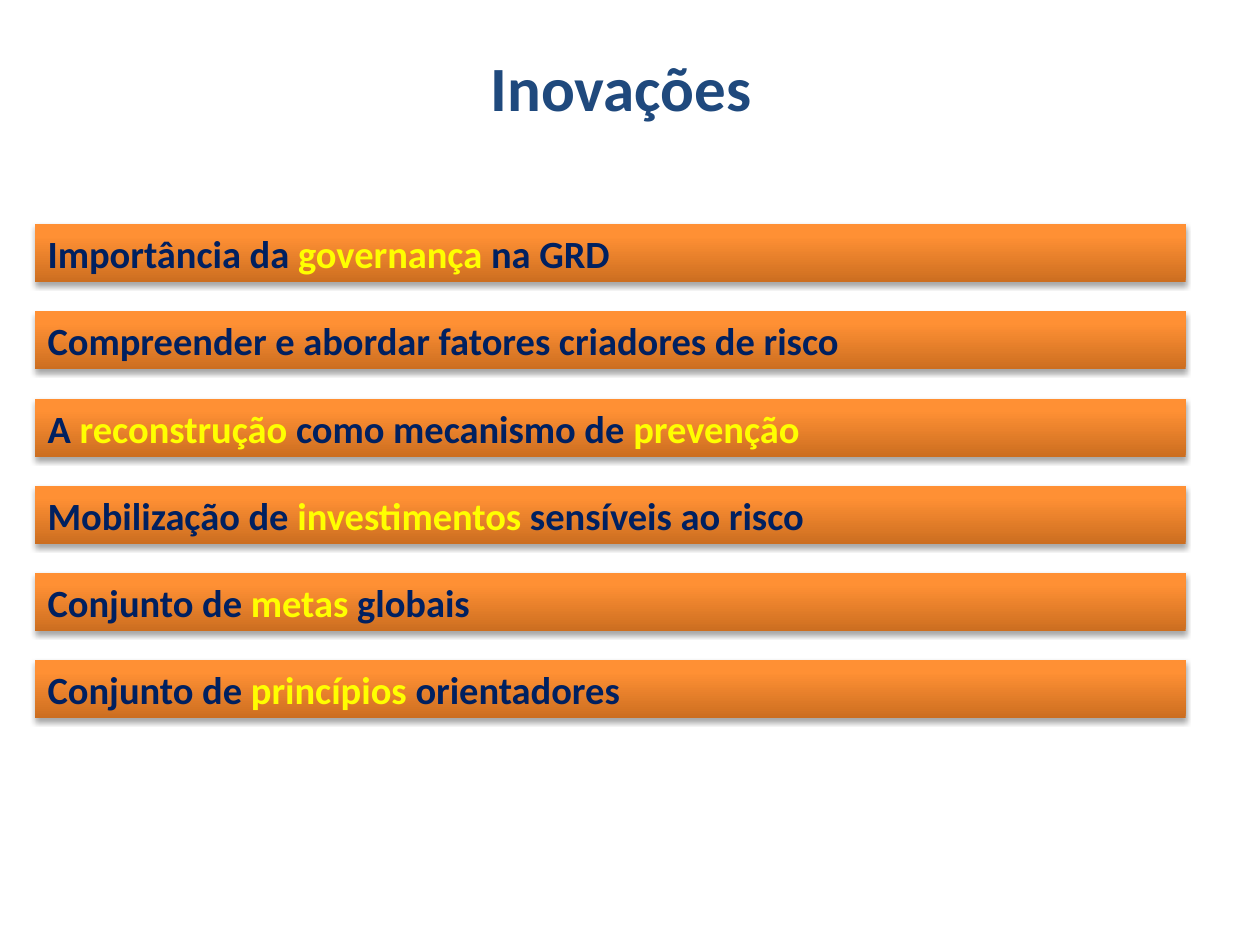
from lxml import etree
from pptx import Presentation, util as u
from pptx.dml.color import RGBColor
from pptx.enum import shapes, text
from pptx.oxml import ns
from copy import deepcopy

TITLE_BLUE = RGBColor(0x1F, 0x49, 0x7D)
NAVY = RGBColor(0x00, 0x20, 0x60)
YELLOW = RGBColor(0xFF, 0xFF, 0x00)
GRADIENT = [
    (0, RGBColor(0xCC, 0x6E, 0x20)),
    (0.8, RGBColor(0xFF, 0x90, 0x34)),
    (1, RGBColor(0xFF, 0x91, 0x36)),
]
FONT = "Calibri"

BAR_LEFT, BAR_TOP = 0.28, 1.78
BAR_WIDTH, BAR_HEIGHT = 9.13, 0.46
BAR_PITCH = 0.692

# Each bar is a list of pieces; those marked True are highlighted.
BARS = [
    [("Importância da ", False), ("governança", True), (" na GRD", False)],
    [("Compreender e abordar fatores criadores de risco", False)],
    [("A ", False), ("reconstrução", True),
     (" como mecanismo de ", False), ("prevenção", True)],
    [("Mobilização de ", False), ("investimentos", True),
     (" sensíveis ao risco", False)],
    [("Conjunto de ", False), ("metas", True), (" globais", False)],
    [("Conjunto de ", False), ("princípios ", True), ("orientadores", False)],
]


def format_font(font, size, color):
    font.name, font.size, font.bold = FONT, u.Pt(size), True
    font.color.rgb = color


def add_title(s, title):
    sp = s.shapes.title
    sp.left, sp.top = u.Inches(0.43), u.Inches(0.41)
    sp.width, sp.height = u.Inches(9), u.Inches(0.55)
    tf = sp.text_frame
    tf.text = title
    tf.vertical_anchor = text.MSO_ANCHOR.MIDDLE
    p = tf.paragraphs[0]
    p.alignment = text.PP_ALIGN.CENTER
    format_font(p.runs[0].font, 36, TITLE_BLUE)


def fill_gradient(sp):
    """Shade the shape from the dark stop at the bottom upwards."""
    sp.fill.gradient()
    sp.fill.gradient_angle = 90
    last = sp.fill.gradient_stops[-1]._gs
    last.addnext(deepcopy(last))
    for stop, (position, color) in zip(sp.fill.gradient_stops, GRADIENT):
        stop.position = position
        stop.color.rgb = color


def add_shadow(sp):
    sp.shadow.inherit = False
    effects = sp._element.spPr.find(ns.qn("a:effectLst"))
    shadow = etree.SubElement(
        effects, ns.qn("a:outerShdw"), blurRad=str(u.Pt(3.1)),
        dist=str(u.Pt(1.8)), dir="5400000", rotWithShape="0")
    color = etree.SubElement(shadow, ns.qn("a:srgbClr"), val="000000")
    etree.SubElement(color, ns.qn("a:alpha"), val="35000")


def add_bar(s, row, pieces):
    sp = s.shapes.add_shape(
        shapes.MSO_SHAPE.RECTANGLE,
        u.Inches(BAR_LEFT), u.Inches(BAR_TOP + row * BAR_PITCH),
        u.Inches(BAR_WIDTH), u.Inches(BAR_HEIGHT))
    fill_gradient(sp)
    sp.line.fill.background()
    add_shadow(sp)
    tf = sp.text_frame
    tf.word_wrap = True
    tf.vertical_anchor = text.MSO_ANCHOR.MIDDLE
    p = tf.paragraphs[0]
    p.alignment = text.PP_ALIGN.LEFT
    for words, highlighted in pieces:
        r = p.add_run()
        r.text = words
        format_font(r.font, 22, YELLOW if highlighted else NAVY)


def main():
    prs = Presentation()
    prs.slide_width, prs.slide_height = u.Inches(10), u.Inches(7.5)
    s = prs.slides.add_slide(prs.slide_layouts[5])
    add_title(s, "Inovações")
    for row, pieces in enumerate(BARS):
        add_bar(s, row, pieces)
    prs.save("out.pptx")


if __name__ == "__main__":
    main()
